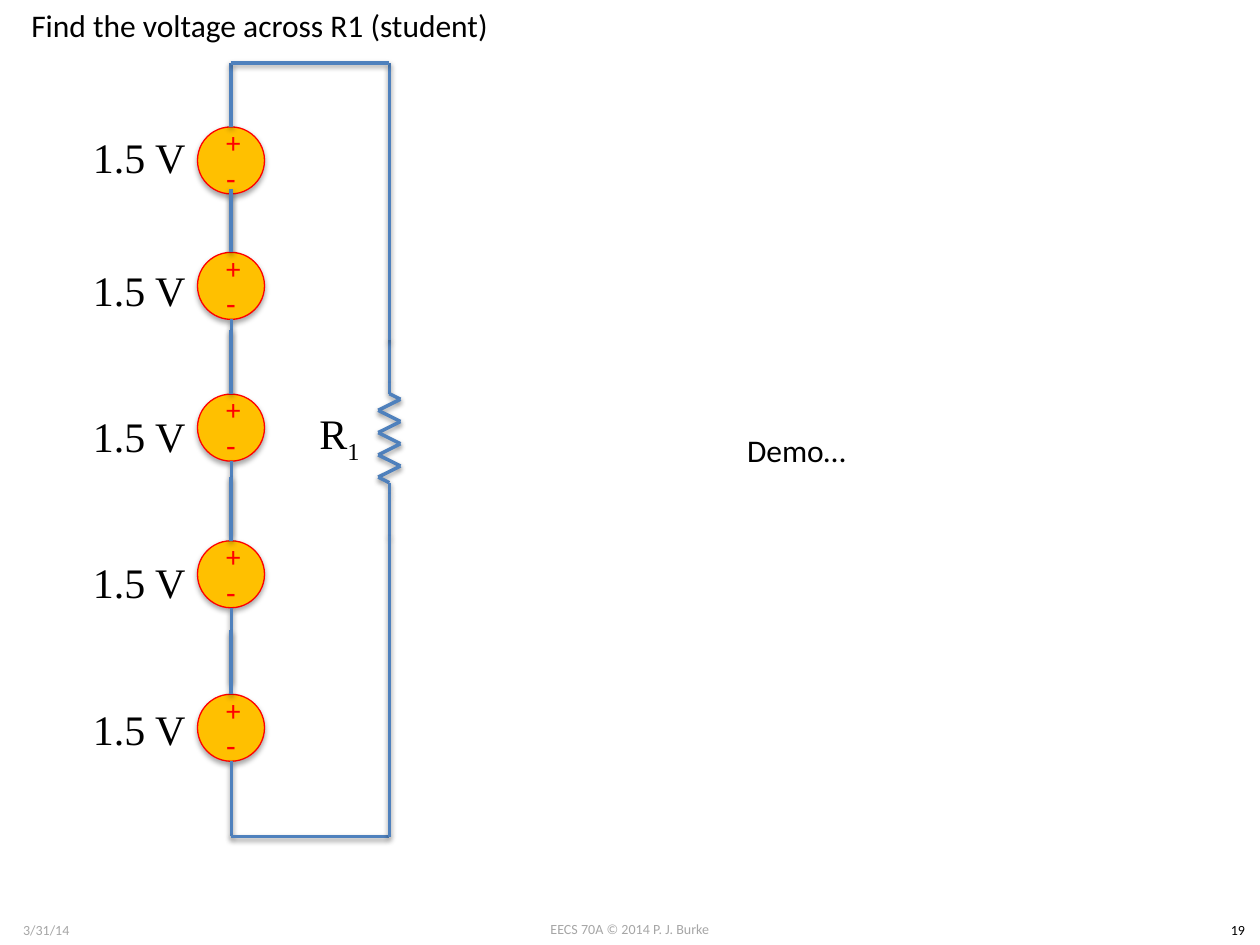
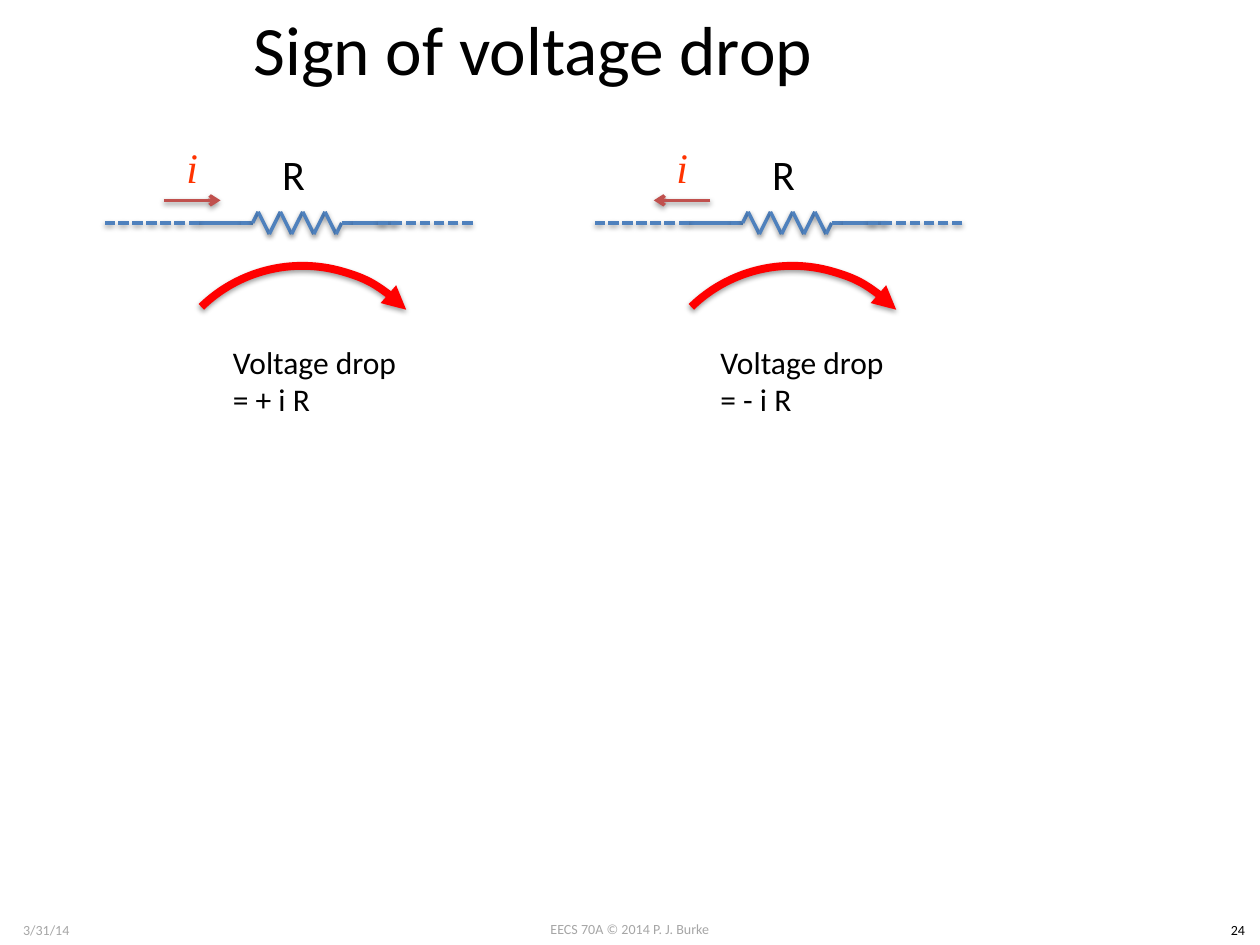
from itertools import pairwise

from lxml.etree import SubElement
from pptx import Presentation
from pptx.dml.color import RGBColor
from pptx.enum.dml import MSO_LINE
from pptx.enum.shapes import MSO_CONNECTOR, MSO_SHAPE
from pptx.enum.text import MSO_ANCHOR, MSO_AUTO_SIZE, PP_ALIGN
from pptx.oxml.ns import qn
from pptx.util import Pt

BLACK = RGBColor(0x00, 0x00, 0x00)
GRAY = RGBColor(0xA6, 0xA6, 0xA6)
BLUE = RGBColor(0x4F, 0x81, 0xBD)
BRICK = RGBColor(0xC0, 0x50, 0x4D)
RED = RGBColor(0xFF, 0x00, 0x00)
ORANGE = RGBColor(0xFF, 0x33, 0x00)
GOLD = RGBColor(0xFF, 0xC0, 0x00)


class Deck:
    sans = "Calibri"
    serif = "Times New Roman"
    wire_width = 2
    zig = 6.36

    def __init__(self):
        self.prs = Presentation()
        self.prs.slide_width, self.prs.slide_height = Pt(720), Pt(540)
        self.s = None

    def slide(self, number):
        self.s = self.prs.slides.add_slide(self.prs.slide_layouts[6])
        self.text("EECS 70A © 2014 P. J. Burke", 276, 522.6, 168, 17, 8, GRAY, center=True)
        self.text("3/31/14", 0, 523.3, 53, 17, 8, GRAY, center=True)
        self.text(number, 694.8, 523.3, 25.2, 17, 8, center=True)

    def text(self, text, x, y, w, h, size, color=BLACK, font=sans,
             center=False, middle=False, italic=False, wrap=True):
        sp = self.s.shapes.add_textbox(Pt(x), Pt(y), Pt(w), Pt(h))
        tf = sp.text_frame
        tf.word_wrap = wrap
        if not wrap:
            tf.auto_size = MSO_AUTO_SIZE.SHAPE_TO_FIT_TEXT
        tf.vertical_anchor = MSO_ANCHOR.MIDDLE if middle else MSO_ANCHOR.TOP
        tf.text = text
        for p in tf.paragraphs:
            p.alignment = PP_ALIGN.CENTER if center else PP_ALIGN.LEFT
            p.font.name, p.font.size, p.font.italic = font, Pt(size), italic
            p.font.color.rgb = color
        return tf.paragraphs[0]

    def label(self, text, x, y, w=85.7, h=52.6, color=BLACK, italic=False):
        return self.text(text, x, y, w, h, 24, color, self.serif, True, True, italic)

    def shadow(self, sp, alpha=38, dist=1.6):
        effects = SubElement(sp._element.spPr, qn("a:effectLst"))
        outer = SubElement(effects, qn("a:outerShdw"), blurRad=str(Pt(3.1)),
                           dist=str(Pt(dist)), dir="5400000", rotWithShape="0")
        color = SubElement(outer, qn("a:srgbClr"), val="000000")
        SubElement(color, qn("a:alpha"), val=str(alpha * 1000))

    def stroke(self, sp, color, width, head=None):
        sp.line.color.rgb = color
        sp.line.width = Pt(width)
        if head:
            SubElement(sp.line._get_or_add_ln(), qn("a:tailEnd"), type=head)

    def wire(self, x1, y1, x2, y2, color=BLUE, head=None, dashed=False):
        sp = self.s.shapes.add_connector(MSO_CONNECTOR.STRAIGHT, Pt(x1), Pt(y1), Pt(x2), Pt(y2))
        if dashed:
            sp.line.dash_style = MSO_LINE.SQUARE_DOT
        self.stroke(sp, color, self.wire_width, head)
        self.shadow(sp)

    def resistor(self, x, y, vertical=False):
        u, lead = self.zig, 24.2
        start = lead + u
        points = [(0, 0), (lead, 0), (start, 0)]
        points += [(start + u * (k + 0.5), -u if k % 2 else u) for k in range(8)]
        points += [(start + 8 * u, 0), (start + 9 * u, 0), (2 * lead + 10 * u, 0)]
        if vertical:
            points = [(x + side, y + along) for along, side in points]
        else:
            points = [(x + along, y - side) for along, side in points]
        for a, b in pairwise(points):
            self.wire(*a, *b)

    def battery(self, x, y):
        d = 38.3
        sp = self.s.shapes.add_shape(MSO_SHAPE.OVAL, Pt(x - d / 2), Pt(y), Pt(d), Pt(d))
        sp.fill.solid()
        sp.fill.fore_color.rgb = GOLD
        self.stroke(sp, RED, 0.75)
        self.shadow(sp, 35, 1.8)
        for sign, dy, size in (("+", -3.2, 16.6), ("-", 17.3, 18)):
            self.text(sign, x - 9.8, y + dy, 18.7, 23.8, size, RED, center=True, middle=True)
        self.wire(x + 0.2, y + d + 42.8, x + 0.2, y + d)
        self.wire(x, y, x, y - 36.4)

    def arc_arrow(self, x, y, d):
        sp = self.s.shapes.add_shape(MSO_SHAPE.ARC, Pt(x), Pt(y), Pt(d), Pt(d))
        sp.rotation = 315.8
        sp.fill.background()
        self.stroke(sp, RED, 4.5, "triangle")
        self.shadow(sp)


def series_batteries(deck):
    deck.slide("19")
    deck.text("Find the voltage across R1 (student)", 10.8, 0, 278.6, 29, 18, wrap=False)
    left, right, top, bottom = 132, 222.5, 36, 478.1
    for cell_y, label_y in ((72.5, 63.4), (144.2, 139), (225.2, 222.5), (309, 306), (396.7, 390.2)):
        deck.battery(left, cell_y)
        deck.label("1.5 V", 36.7, label_y)
    resistor_top, resistor_bottom = 194.4, 306.2
    deck.resistor(right, resistor_top, vertical=True)
    deck.wire(right, resistor_top, right, top)
    deck.wire(left, top, right, top)
    deck.wire(left, bottom, right, bottom)
    deck.wire(right, resistor_bottom, right, bottom)
    p = deck.label("R", 151.2, 223.2)
    r = p.add_run()
    r.text = "1"
    r._r.get_or_add_rPr().set("baseline", "-25000")
    deck.text("Demo…", 419.8, 242.6, 72.7, 29, 18, wrap=False)


def voltage_drop_sign(deck):
    deck.slide("24")
    deck.text("Sign of voltage drop", 59.8, 0, 489.6, 54, 39.6, center=True, middle=True)
    wire_y, arrow_y = 127.4, 114.5
    for x, sign, drop_x in ((59.8, "+", 126), (339.8, "-", 404.6)):
        deck.resistor(x + 54, wire_y)
        deck.text("R", x + 94.3, 81.4, 31.7, 36, 24)
        ends = [x + 33.8, x + 66.2]
        if sign == "-":
            ends.reverse()
        deck.wire(ends[0], arrow_y, ends[1], arrow_y, BRICK, "arrow")
        deck.label("i", x + 22.3, 73.4, 55.4, 43.9, ORANGE, italic=True)
        for dash_x in (x, x + 156.2):
            deck.wire(dash_x + 54, wire_y, dash_x, wire_y, dashed=True)
        deck.text(f"Voltage drop\n= {sign} i R", drop_x, 192.2, 108.7, 51, 18, wrap=False)
        deck.arc_arrow(x + 30.2, 151.9, 165.6)


def main():
    deck = Deck()
    series_batteries(deck)
    voltage_drop_sign(deck)
    deck.prs.save("out.pptx")


if __name__ == "__main__":
    main()
